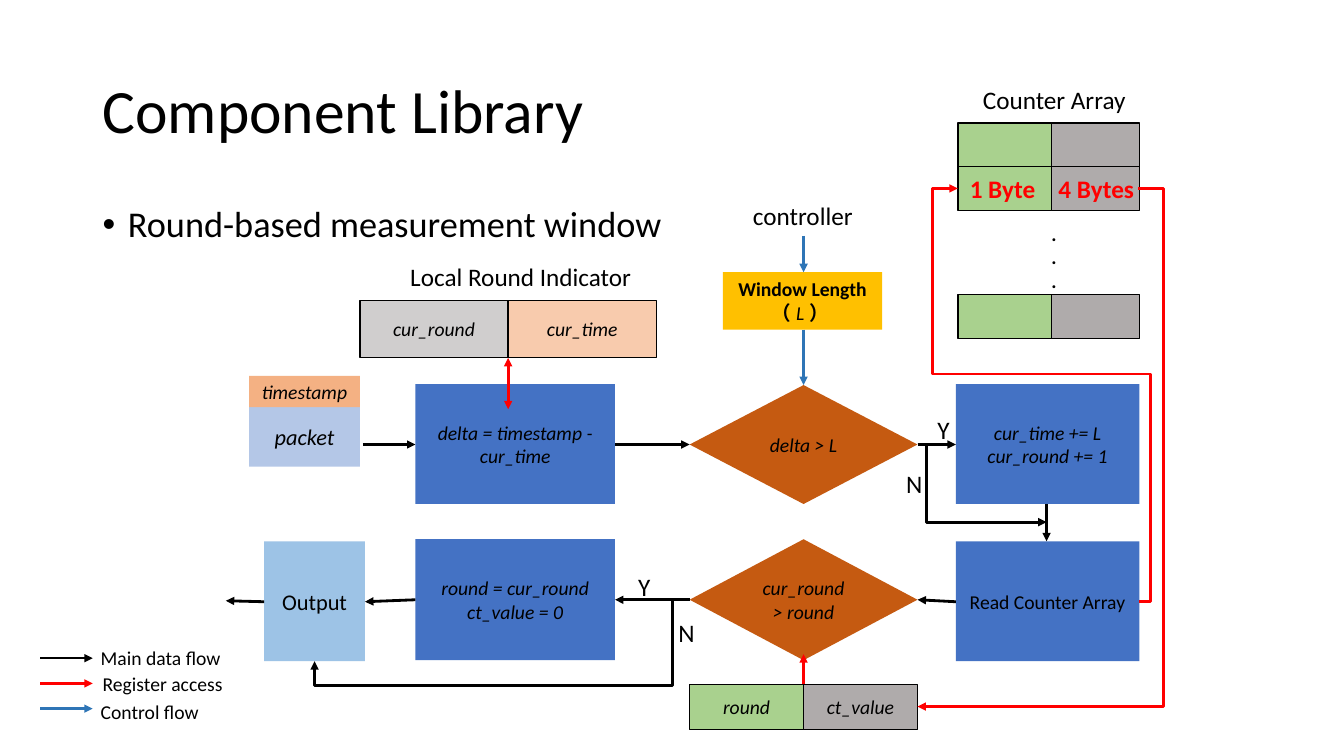
from typing import NamedTuple

from lxml.etree import SubElement
from pptx import Presentation
from pptx.dml.color import RGBColor
from pptx.enum.shapes import MSO_CONNECTOR as Connector, MSO_SHAPE as Shape
from pptx.enum.text import MSO_ANCHOR as Anchor, MSO_AUTO_SIZE as AutoSize, PP_ALIGN as Align
from pptx.oxml.ns import qn
from pptx.util import Pt

SCALE = 9144
BLACK, RED, CONTROL_BLUE = "000000", "FF0000", "2E75B6"
GREEN, GRAY, STEP_BLUE, DECISION = "A9D18E", "AFABAB", "4472C4", "C55A11"


class Box(NamedTuple):
    left: int
    top: int
    width: int
    height: int

    def inner(self, left, top, width, height):
        return Box(self.left + left, self.top + top, width, height)

    def point(self, across, down):
        return self.left + round(self.width * across), self.top + round(self.height * down)

    def emu(self):
        return [px(value) for value in self]


def px(value):
    return int(value * SCALE)


def rgb(value):
    return RGBColor.from_string(value)


def style(paragraph, size, color=BLACK, bold=False, italic=False):
    for run in paragraph.runs:
        run.font.name = "Calibri"
        run.font.size = Pt(size)
        run.font.bold = bold
        run.font.italic = italic
        run.font.color.rgb = rgb(color)


def add_block(slide, box, fill, text="", size=14, italic=True, outlined=False, kind=Shape.RECTANGLE):
    shape = slide.shapes.add_shape(kind, *box.emu())
    shape.shadow.inherit = False
    shape.fill.solid()
    shape.fill.fore_color.rgb = rgb(fill)
    if outlined:
        shape.line.color.rgb = rgb(BLACK)
        shape.line.width = Pt(1)
    else:
        shape.line.fill.background()
    shape.text_frame.text = text
    shape.text_frame.vertical_anchor = Anchor.MIDDLE
    for paragraph in shape.text_frame.paragraphs:
        paragraph.alignment = Align.CENTER
        style(paragraph, size, italic=italic)
    return shape


def add_label(slide, box, text, size=18, color=BLACK, bold=False, wrap=False):
    frame = slide.shapes.add_textbox(*box.emu()).text_frame
    frame.word_wrap = wrap
    frame.auto_size = AutoSize.NONE if wrap else AutoSize.SHAPE_TO_FIT_TEXT
    frame.text = text
    for paragraph in frame.paragraphs:
        style(paragraph, size, color, bold)
    return frame


def add_arrow(slide, begin, end, color=BLACK, width=2, bends=(), double=False):
    kind = Connector.ELBOW if bends else Connector.STRAIGHT
    connector = slide.shapes.add_connector(kind, *(px(value) for value in begin + end))
    connector.line.color.rgb = rgb(color)
    connector.line.width = Pt(width)
    properties = connector._element.spPr
    if bends:
        geometry = properties.find(qn("a:prstGeom"))
        geometry.set("prst", f"bentConnector{len(bends) + 2}")
        guides = geometry.find(qn("a:avLst"))
        for index, bend in enumerate(bends):
            axis = index % 2
            ratio = (bend - begin[axis]) / (end[axis] - begin[axis])
            SubElement(guides, qn("a:gd"), name=f"adj{index + 1}", fmla=f"val {round(ratio * 100000)}")
    line = properties.find(qn("a:ln"))
    if double:
        SubElement(line, qn("a:headEnd"), type="triangle")
    SubElement(line, qn("a:tailEnd"), type="triangle")
    SubElement(properties, qn("a:effectLst"))


def draw_heading(slide, box):
    title = add_label(slide, box.inner(0, 0, 1150, 145), "Component Library", 44, wrap=True)
    title.vertical_anchor = Anchor.MIDDLE
    title.paragraphs[0].line_spacing = 0.9
    body = add_label(slide, box.inner(0, 160, 609, 54), "Round-based measurement window", 25.9, wrap=True)
    paragraph = body.paragraphs[0]
    paragraph.line_spacing = 0.9
    paragraph.space_before = Pt(10)
    properties = paragraph._p.get_or_add_pPr()
    properties.set("marL", str(px(25)))
    properties.set("indent", str(px(-25)))
    SubElement(properties, qn("a:buFont"), typeface="Arial")
    SubElement(properties, qn("a:buChar"), char="•")


def draw_pair(slide, box, texts, fills):
    half = box.width // 2
    for column, (text, fill) in enumerate(zip(texts, fills)):
        add_block(slide, box.inner(column * half, 0, half, box.height), fill, text, outlined=True)


def draw_counter_array(slide, box):
    add_label(slide, box.inner(15, 0, 163, 40), "Counter Array")
    for top in (43, 86, 213):
        add_block(slide, box.inner(0, top, 93, 44), GREEN, outlined=True)
        add_block(slide, box.inner(93, top, 87, 44), GRAY, outlined=True)
    add_label(slide, box.inner(2, 88, 86, 40), "1 Byte", color=RED, bold=True)
    add_label(slide, box.inner(90, 88, 96, 40), "4 Bytes", color=RED, bold=True)
    dots = add_label(slide, box.inner(83, 136, 23, 81), ".\n.\n.", 14, bold=True, wrap=True)
    for paragraph in dots.paragraphs:
        paragraph.alignment = Align.CENTER


def draw_window_control(slide, box):
    add_label(slide, box.inner(20, 0, 120, 40), "controller")
    window = box.inner(0, 76, 158, 57)
    frame = add_block(slide, window, "FFC000", "Window Length", italic=False).text_frame
    frame.paragraphs[0].runs[0].font.bold = True
    length = frame.add_paragraph()
    length.alignment = Align.CENTER
    for text in ("（", "L", "） "):
        length.add_run().text = text
    style(length, 14, bold=True)
    opening, letter, closing = length.runs
    letter.font.bold = False
    letter.font.italic = True
    for run in (opening, closing):
        run.font.name = "Noto Sans CJK SC"
        SubElement(run._r.get_or_add_rPr(), qn("a:ea"), typeface="Noto Sans CJK SC")
    center = box.left + 80
    add_arrow(slide, (center, box.top + 40), (center, window.top), CONTROL_BLUE)
    add_arrow(slide, (center, window.top + window.height), (center, box.top + box.height), CONTROL_BLUE)


def draw_flow(slide, box, indicator, state, array):
    packet = box.inner(47, 34, 110, 59)
    delta = box.inner(212, 11, 198, 119)
    compare = box.inner(484, 12, 226, 118)
    advance = box.inner(748, 11, 182, 119)
    output = box.inner(62, 167, 100, 119)
    reset = box.inner(212, 165, 198, 120)
    expired = box.inner(484, 165, 226, 120)
    read = box.inner(748, 167, 182, 119)
    add_block(slide, packet, "B4C7E7", "packet", 16)
    add_block(slide, box.inner(47, 3, 110, 31), "F4B183", "timestamp")
    add_block(slide, delta, STEP_BLUE, "delta = timestamp - cur_time")
    add_block(slide, compare, DECISION, "delta > L", kind=Shape.DIAMOND)
    add_block(slide, advance, STEP_BLUE, "cur_time += L\ncur_round += 1")
    add_block(slide, expired, DECISION, "cur_round > round", kind=Shape.DIAMOND)
    add_block(slide, reset, STEP_BLUE, "round = cur_round\nct_value = 0")
    add_block(slide, read, STEP_BLUE, "Read Counter Array", italic=False)
    add_block(slide, output, "9DC3E6", "Output", 16, italic=False)
    delta_entry = delta.point(0, 0.5)
    add_arrow(slide, (box.left + 160, delta_entry[1]), delta_entry, width=1.75)
    for source, target in ((delta, compare), (compare, advance)):
        add_arrow(slide, source.point(1, 0.5), target.point(0, 0.5))
    for source, target in ((read, expired), (expired, reset), (reset, output)):
        add_arrow(slide, source.point(0, 0.5), target.point(1, 0.5))
    exit_left, exit_top = output.point(0, 0.5)
    add_arrow(slide, (exit_left, exit_top), (exit_left - 38, exit_top - 1))
    join = advance.left + 90
    add_arrow(slide, (join, advance.point(0, 1)[1]), (join, read.top))
    add_arrow(slide, compare.point(1, 0.5), (join, box.top + 148), bends=(box.left + 719,))
    add_arrow(slide, expired.point(0, 0.5), output.point(0.5, 1), bends=(box.left + 467, box.top + 310))
    counter_left, counter_right = (array.left, array.top + 108), (array.left + 179, array.top + 108)
    add_arrow(slide, read.point(1, 0.5), counter_left, RED,
              bends=(box.left + 941, box.top + 1, box.left + 725))
    add_arrow(slide, counter_right, state.point(1, 0.5), RED, bends=(box.left + 954,))
    state_top = state.point(0.5, 0)
    add_arrow(slide, state_top, (state_top[0], state_top[1] - 30), RED)
    indicator_base = indicator.point(0.5, 1)
    add_arrow(slide, (indicator_base[0], indicator_base[1] + 51), indicator_base, RED, double=True)
    for text, left, top in (("Y", 720, 36), ("N", 689, 90), ("Y", 423, 192), ("N", 463, 238)):
        add_label(slide, box.inner(left, top, 34, 40), text)


def draw_legend(slide, box):
    entries = (("Main data flow", BLACK, 50, 0), ("Register access", RED, 52, 26), ("Control flow", CONTROL_BLUE, 50, 53))
    for row, (text, color, left, top) in enumerate(entries):
        line_top = box.top + 17 + row * 25
        add_arrow(slide, (box.left, line_top), (box.left + 52, line_top), color, 1.75)
        add_label(slide, box.inner(left, top, 140, 34), text, 14)


def main():
    presentation = Presentation()
    presentation.slide_width, presentation.slide_height = px(1333), px(750)
    slide = presentation.slides.add_slide(presentation.slide_layouts[6])
    indicator = Box(357, 298, 294, 57)
    state = Box(684, 679, 226, 45)
    array = Box(950, 79, 180, 257)
    draw_heading(slide, Box(92, 40, 1150, 214))
    add_label(slide, indicator.inner(40, -44, 242, 40), "Local Round Indicator")
    draw_pair(slide, indicator, ("cur_round", "cur_time"), ("D0CECE", "F8CBAD"))
    draw_pair(slide, state, ("round", "ct_value"), (GREEN, GRAY))
    draw_counter_array(slide, array)
    draw_window_control(slide, Box(717, 194, 158, 188))
    draw_flow(slide, Box(200, 370, 930, 290), indicator, state, array)
    draw_legend(slide, Box(40, 636, 192, 87))
    presentation.save("out.pptx")


if __name__ == "__main__":
    main()
